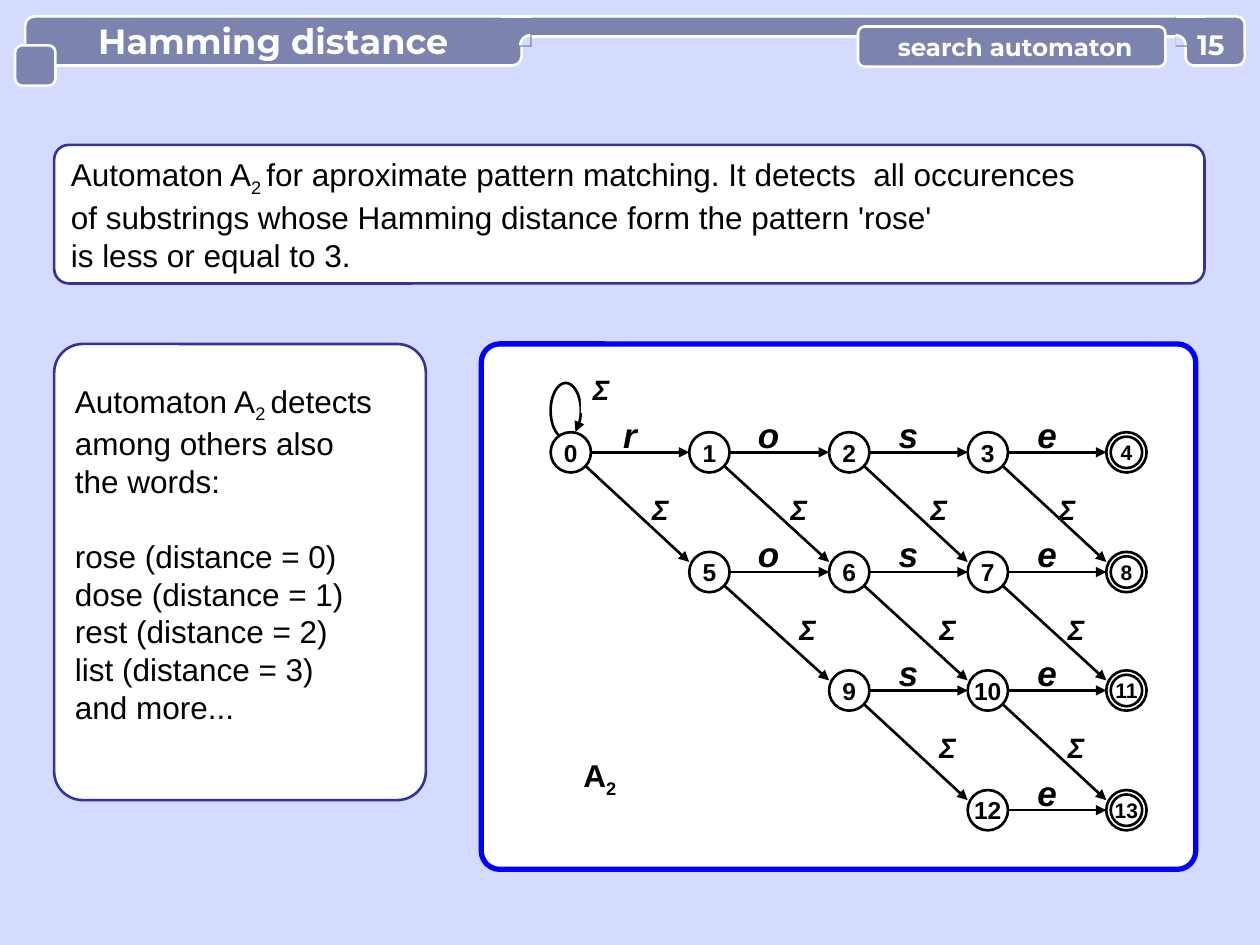
from math import cos, radians, sin

from lxml import etree
from pptx import Presentation
from pptx.dml.color import RGBColor
from pptx.enum.shapes import MSO_CONNECTOR, MSO_SHAPE
from pptx.enum.text import MSO_ANCHOR, PP_ALIGN
from pptx.oxml.ns import qn
from pptx.util import Inches, Pt

ROUND, RECT, OVAL = MSO_SHAPE.ROUNDED_RECTANGLE, MSO_SHAPE.RECTANGLE, MSO_SHAPE.OVAL
STRAIGHT = MSO_CONNECTOR.STRAIGHT
TOP, MIDDLE = MSO_ANCHOR.TOP, MSO_ANCHOR.MIDDLE
LEFT, CENTER = PP_ALIGN.LEFT, PP_ALIGN.CENTER

COLORS = {"page": "D5DAFF", "bar": "7D83AF", "white": "FFFFFF",
          "black": "000000", "navy": "333399", "blue": "0000FF"}

# Text between bars is subscript.
INTRO = ["Automaton A|2 |for aproximate pattern matching. It detects  all occurences",
         "of substrings whose Hamming distance form the pattern 'rose'",
         "is less or equal to 3."]
WORDS = ["Automaton A|2 |detects", "among others also", "the words:",
         "rose (distance = 0)", "dose (distance = 1)", "rest (distance = 2)",
         "list (distance = 3)", "and more..."]
FIRST_WORD = 3
PATTERN = "rose"
COLUMNS = [4.53, 5.63, 6.74, 7.84, 8.94]
ROWS = [3.59, 4.54, 5.48, 6.43]
RADIUS = 0.16
LABEL = 0.32

deck = Presentation()
deck.slide_width, deck.slide_height = Inches(10), Inches(7.5)
page = deck.slides.add_slide(deck.slide_layouts[6])


def color(name):
    return RGBColor.from_string(COLORS[name])


def paint(shape, fill=None, line=None, width=1.5):
    shape.shadow.inherit = False
    if fill:
        shape.fill.solid()
        shape.fill.fore_color.rgb = color(fill)
    else:
        shape.fill.background()
    if line:
        shape.line.color.rgb = color(line)
        shape.line.width = Pt(width)
    else:
        shape.line.fill.background()


def add_box(kind, left, top, width, height, fill="white", line=None, points=1.5, corner=None):
    box = page.shapes.add_shape(kind, *map(Inches, (left, top, width, height)))
    if corner is not None:
        box.adjustments[0] = corner
    paint(box, fill, line, points)
    return box


def write(box, lines, size, ink="black", face="Arial", bold=True, italic=False,
          align=CENTER, anchor=MIDDLE, wrap=False, inset=None):
    frame = box.text_frame
    frame.word_wrap, frame.vertical_anchor = wrap, anchor
    if inset is not None:
        frame.margin_left = frame.margin_right = Inches(inset)
        frame.margin_top = frame.margin_bottom = Inches(inset)
    for index, line in enumerate(lines):
        para = frame.add_paragraph() if index else frame.paragraphs[0]
        para.alignment = align
        font = para.font
        font.name, font.size, font.bold, font.italic = face, Pt(size), bold, italic
        font.color.rgb = color(ink)
        for part, text in enumerate(line.split("|")):
            span = para.add_run()
            span.text = text
            if part % 2:
                span._r.get_or_add_rPr().set("baseline", "-25000")


def add_arrowhead(shape, end):
    outline = shape._element.spPr.find(qn("a:ln"))
    etree.SubElement(outline, qn(f"a:{end}")).set("type", "triangle")


def add_line(x1, y1, x2, y2, ink="black", arrow=True):
    line = page.shapes.add_connector(STRAIGHT, *map(Inches, (x1, y1, x2, y2)))
    line.line.color.rgb = color(ink)
    line.line.width = Pt(1.5)
    if arrow:
        add_arrowhead(line, "tailEnd")
    etree.SubElement(line._element.spPr, qn("a:effectLst"))


def arc(x, y, rx, ry, start, stop, steps):
    """Points along an ellipse; angles in degrees, clockwise from the right."""
    angles = [radians(start + (stop - start) * step / steps) for step in range(steps + 1)]
    return [(x + rx * cos(angle), y + ry * sin(angle)) for angle in angles]


def add_outline(points, close=False, **style):
    corners = [(Inches(x), Inches(y)) for x, y in points]
    builder = page.shapes.build_freeform(*corners[0])
    builder.add_line_segments(corners[1:], close=close)
    shape = builder.convert_to_shape()
    paint(shape, **style)
    return shape


def add_joint(left, center, end_angle):
    """Cover the seam between a tab and the thin bar with a rounded inner corner."""
    add_box(RECT, left, 0.13, 0.24, 0.24, "bar")
    add_line(left, 0.13, left + 0.24, 0.13, "white", arrow=False)
    curve = arc(center, 0.36, 0.08, 0.08, 270, end_angle, 10)
    add_outline(curve + [(center, 0.36)], close=True, fill="page")
    add_outline(curve, line="white")


def add_label(text, left, top, size):
    box = add_box(RECT, left, top, LABEL, LABEL)
    write(box, [text], size, italic=True, anchor=TOP, wrap=True, inset=0)


def add_state(number, x, y, final):
    radius, size = RADIUS, 14
    if final:
        add_box(OVAL, x - radius, y - radius, 2 * radius, 2 * radius, line="black")
        radius, size = 0.125, 12
    circle = add_box(OVAL, x - radius, y - radius, 2 * radius, 2 * radius, line="black")
    write(circle, [str(number)], size)


def add_panels():
    body = {"size": 18, "bold": False, "align": LEFT, "wrap": True}
    write(add_box(ROUND, 0.43, 1.15, 9.13, 1.1, line="navy", corner=0.106), INTRO, **body)
    add_box(ROUND, 3.82, 2.73, 5.67, 4.17, line="blue", points=3, corner=0.035)
    words = add_box(ROUND, 0.43, 2.73, 2.95, 3.62, line="navy", corner=0.077)
    write(words, WORDS, **body)
    words.text_frame.paragraphs[FIRST_WORD].space_before = Pt(21)
    words.text_frame.margin_bottom = Inches(0.34)
    name = page.shapes.add_textbox(*map(Inches, (4.52, 5.95, 0.48, 0.4)))
    write(name, ["A|2"], 18, anchor=TOP)


def add_header():
    tab = {"fill": "bar", "line": "white"}
    heading = {"ink": "white", "face": "Montserrat"}
    title = add_box(ROUND, 0.2, 0.13, 3.94, 0.39, corner=0.188, **tab)
    write(title, ["Hamming distance"], 20, **heading)
    add_box(ROUND, 4.06, 0.13, 5.43, 0.16, corner=0.5, **tab)
    add_joint(3.98, 4.21, 180)
    add_box(ROUND, 0.12, 0.36, 0.32, 0.32, corner=0.17, **tab)
    add_box(ROUND, 9.41, 0.13, 0.47, 0.39, corner=0.17, **tab)
    add_joint(9.33, 9.33, 360)
    topic = add_box(ROUND, 6.81, 0.21, 2.44, 0.32, corner=0.17, **tab)
    write(topic, [" search automaton"], 14, **heading)
    number = page.shapes.add_textbox(*map(Inches, (9.41, 0.22, 0.4, 0.27)))
    write(number, ["15"], 16, wrap=True, inset=0, **heading)


def add_automaton():
    last = len(COLUMNS) - 1
    cells = [(row, column) for row in range(len(ROWS)) for column in range(row, last + 1)]
    moves = [(row, column) for row, column in cells if column < last]
    errors = [(row, column) for row, column in moves if row < len(ROWS) - 1]

    for row, column in errors:
        shift = (0.62 if row else 0.55) - (0.08 if column == last - 1 else 0)
        add_label("Σ", COLUMNS[column] + shift, ROWS[row] + 0.32, 16)
    loop = add_outline(arc(4.49, 3.26, 0.12, 0.22, 50, -270, 40), line="black")
    add_arrowhead(loop, "headEnd")
    for row, column in errors:
        add_line(COLUMNS[column], ROWS[row],
                 COLUMNS[column + 1] - RADIUS, ROWS[row + 1] - 0.08)
    for row, column in moves:
        x, y = COLUMNS[column], ROWS[row]
        add_label(PATTERN[column], x + 0.31, y - 0.31, 20)
        add_line(x + RADIUS, y, COLUMNS[column + 1] - RADIUS, y)
    for number, (row, column) in enumerate(cells):
        add_state(number, COLUMNS[column], ROWS[row], column == last)
    add_label("Σ", 4.61, 2.96, 16)


page.background.fill.solid()
page.background.fill.fore_color.rgb = color("page")
add_panels()
add_header()
add_automaton()
deck.save("out.pptx")
